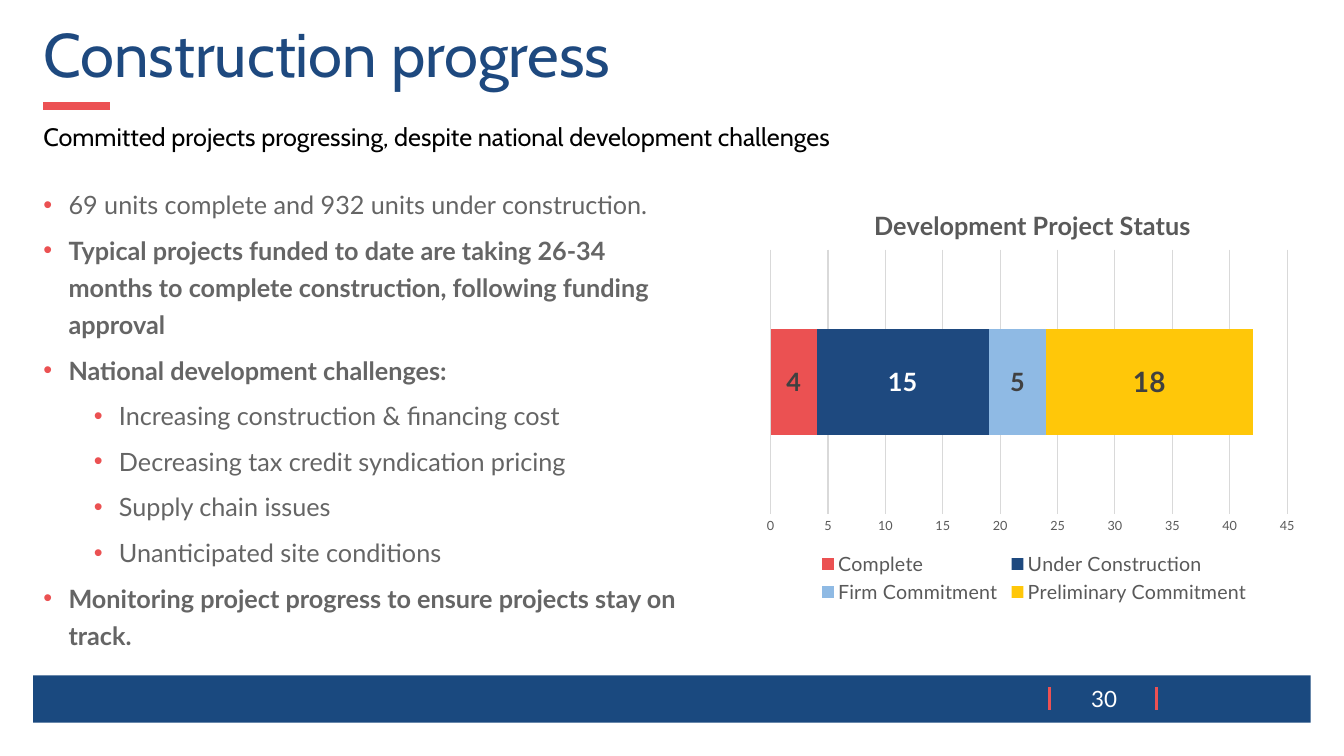
import pptx
import pptx.chart.data
import pptx.dml.color
import pptx.enum.chart
import pptx.enum.shapes
import pptx.enum.text
import pptx.oxml
import pptx.oxml.ns
import pptx.util
from lxml import etree

Inches, Pt = pptx.util.Inches, pptx.util.Pt
qn = pptx.oxml.ns.qn

NAVY, RED, BULLET_RED, BAR_BLUE = "1E497F", "EC5153", "EB5152", "1A497F"
GRAY, CHART_GRAY, DARK, WHITE = "656565", "595959", "404040", "FFFFFF"

TITLE = "Construction progress"
SUBTITLE = "Committed projects progressing, despite national development challenges"
PAGE = "30"
# text, level, bold
POINTS = [
    ("69 units complete and 932 units under construction.", 0, False),
    ("Typical projects funded to date are taking 26-34 months to complete "
     "construction, following funding approval", 0, True),
    ("National development challenges:", 0, True),
    ("Increasing construction & financing cost", 1, False),
    ("Decreasing tax credit syndication pricing", 1, False),
    ("Supply chain issues", 1, False),
    ("Unanticipated site conditions", 1, False),
    ("Monitoring project progress to ensure projects stay on track.", 0, True),
]
CHART_TITLE = "Development Project Status"
# name, projects, fill, label colour, label size
STATUSES = [
    ("Complete", 4, BULLET_RED, DARK, 18),
    ("Under Construction", 15, NAVY, WHITE, 18),
    ("Firm Commitment", 5, "8FBAE4", DARK, 18),
    ("Preliminary Commitment", 18, "FFC709", DARK, 20),
]
# left, top, then width and height where given, as shares of the chart
TITLE_PLACE = (0.21, 0.05)
PLOT_PLACE = (0.03, 0.16, 0.94, 0.62)
LEGEND_PLACE = (0.11, 0.86, 0.8, 0.14)


def rgb(value):
    return pptx.dml.color.RGBColor.from_string(value)


def style(font, name, size, color, bold=False):
    font.name, font.size, font.bold = name, Pt(size), bold
    font.color.rgb = rgb(color)


def place(shape, left, top, width, height):
    shape.left, shape.top = Inches(left), Inches(top)
    shape.width, shape.height = Inches(width), Inches(height)


def add_rule(slide, start, end, weight):
    ends = [Inches(value) for value in start + end]
    rule = slide.shapes.add_connector(pptx.enum.shapes.MSO_CONNECTOR.STRAIGHT, *ends)
    rule.line.color.rgb = rgb(RED)
    rule.line.width = Pt(weight)
    etree.SubElement(rule._element.spPr, qn("a:effectLst"))


def set_bullet(paragraph, indent):
    """Give the paragraph a red bullet, or none when indent is None."""
    props = paragraph._p.get_or_add_pPr()
    if indent is None:
        props.set("marL", "0")
        props.set("indent", "0")
        etree.SubElement(props, qn("a:buNone"))
        return
    props.set("marL", str(Inches(indent)))
    props.set("indent", str(-Inches(0.25)))
    color = etree.SubElement(props, qn("a:buClr"))
    etree.SubElement(color, qn("a:srgbClr")).set("val", BULLET_RED)
    etree.SubElement(props, qn("a:buFont")).set("typeface", "Arial")
    etree.SubElement(props, qn("a:buChar")).set("char", "•")


def set_layout(element, index, fractions, inner=False):
    """Fix a chart part's place; index is where its layout element belongs."""
    for old in element.findall(qn("c:layout")):
        element.remove(old)
    layout = etree.Element(qn("c:layout"))
    manual = etree.SubElement(layout, qn("c:manualLayout"))
    settings = [("layoutTarget", "inner")] if inner else []
    settings += [("xMode", "edge"), ("yMode", "edge")]
    settings += zip("xywh", map(str, fractions))
    for tag, value in settings:
        etree.SubElement(manual, qn("c:" + tag)).set("val", value)
    element.insert(index, layout)


def add_text(slide):
    title, points, subtitle = slide.placeholders
    places = [(title, (0.33, 0.19, 12.67, 0.77)),
              (points, (0.33, 1.76, 6.62, 4.04)),
              (subtitle, (0.33, 1.13, 12.67, 0.93))]
    for box, bounds in places:
        place(box, *bounds)
        box.text_frame.auto_size = pptx.enum.text.MSO_AUTO_SIZE.NONE

    title.text_frame.text = TITLE
    heading = title.text_frame.paragraphs[0]
    heading.alignment = pptx.enum.text.PP_ALIGN.LEFT
    heading.line_spacing = 0.9
    style(heading.runs[0].font, "Cabin", 44, NAVY)

    subtitle.text_frame.text = SUBTITLE
    line = subtitle.text_frame.paragraphs[0]
    set_bullet(line, None)
    line.line_spacing, line.space_before, line.space_after = 1.07, Pt(0), Pt(6)
    style(line.runs[0].font, "Cabin", 18, "000000")

    points.text_frame.text = "\n".join(text for text, _, _ in POINTS)
    for paragraph, (_, level, bold) in zip(points.text_frame.paragraphs, POINTS):
        paragraph.level = level
        set_bullet(paragraph, 0.25 + 0.5 * level)
        paragraph.line_spacing = 1.23
        paragraph.space_before, paragraph.space_after = Pt(0), Pt(6)
        style(paragraph.runs[0].font, "Lato", 18, GRAY, bold)


def add_footer(slide):
    band = slide.shapes.add_shape(pptx.enum.shapes.MSO_SHAPE.RECTANGLE, 0, 0, 0, 0)
    place(band, 0.33, 6.7, 12.67, 0.47)
    band.shadow.inherit = False
    band.fill.solid()
    band.fill.fore_color.rgb = rgb(BAR_BLUE)
    band.line.fill.background()
    for x in (10.41, 11.47):
        add_rule(slide, (x, 6.82), (x, 7.04), 2.25)

    page = slide.shapes.add_textbox(0, 0, 0, 0)
    place(page, 10.63, 6.75, 0.64, 0.37)
    page.text_frame.word_wrap = True
    page.text_frame.vertical_anchor = pptx.enum.text.MSO_ANCHOR.MIDDLE
    page.text_frame.text = PAGE
    number = page.text_frame.paragraphs[0]
    number.alignment = pptx.enum.text.PP_ALIGN.CENTER
    style(number.runs[0].font, "Lato", 16, WHITE)


def add_status_chart(slide):
    kinds = pptx.enum.chart
    data = pptx.chart.data.CategoryChartData()
    data.categories = ["1"]
    for name, count, *_ in STATUSES:
        data.add_series(name, [count])
    bounds = [Inches(value) for value in (7.48, 1.8, 5.45, 4.23)]
    chart = slide.shapes.add_chart(kinds.XL_CHART_TYPE.BAR_STACKED, *bounds, data).chart
    style(chart.font, "Lato", 10, "000000")

    chart.has_title = True
    chart.chart_title.text_frame.text = CHART_TITLE
    heading = chart.chart_title.text_frame.paragraphs[0].runs[0]
    style(heading.font, "Lato", 18, CHART_GRAY, True)
    set_layout(chart.chart_title._element, 1, TITLE_PLACE)

    chart.has_legend = True
    chart.legend.position = kinds.XL_LEGEND_POSITION.BOTTOM
    chart.legend.include_in_layout = False
    style(chart.legend.font, "Lato", 14, CHART_GRAY)
    set_layout(chart.legend._element, 1, LEGEND_PLACE)

    chart.category_axis.visible = False
    counts = chart.value_axis
    counts.minimum_scale, counts.maximum_scale, counts.major_unit = 0, 45, 5
    counts.major_tick_mark = kinds.XL_TICK_MARK.NONE
    counts.format.line.fill.background()
    counts.major_gridlines.format.line.color.rgb = rgb("D9D9D9")
    counts.major_gridlines.format.line.width = Pt(0.75)
    style(counts.tick_labels.font, "Lato", 9, CHART_GRAY)

    plot = chart.plots[0]
    plot.gap_width, plot.overlap, plot.vary_by_categories = 150, 100, False
    for series, (_, _, fill, label_color, size) in zip(plot.series, STATUSES):
        series.format.fill.solid()
        series.format.fill.fore_color.rgb = rgb(fill)
        series.data_labels.show_value = True
        style(series.data_labels.font, "Lato", size, label_color, True)
    set_layout(chart._chartSpace.chart.plotArea, 0, PLOT_PLACE, inner=True)


def main():
    deck = pptx.Presentation()
    deck.slide_width, deck.slide_height = Inches(13.33), Inches(7.5)
    slide = deck.slides.add_slide(deck.slide_layouts.get_by_name("Two Content"))
    add_text(slide)
    add_rule(slide, (0.43, 1.05), (1.09, 1.05), 6)
    add_footer(slide)
    add_status_chart(slide)
    deck.save("out.pptx")


if __name__ == "__main__":
    main()
